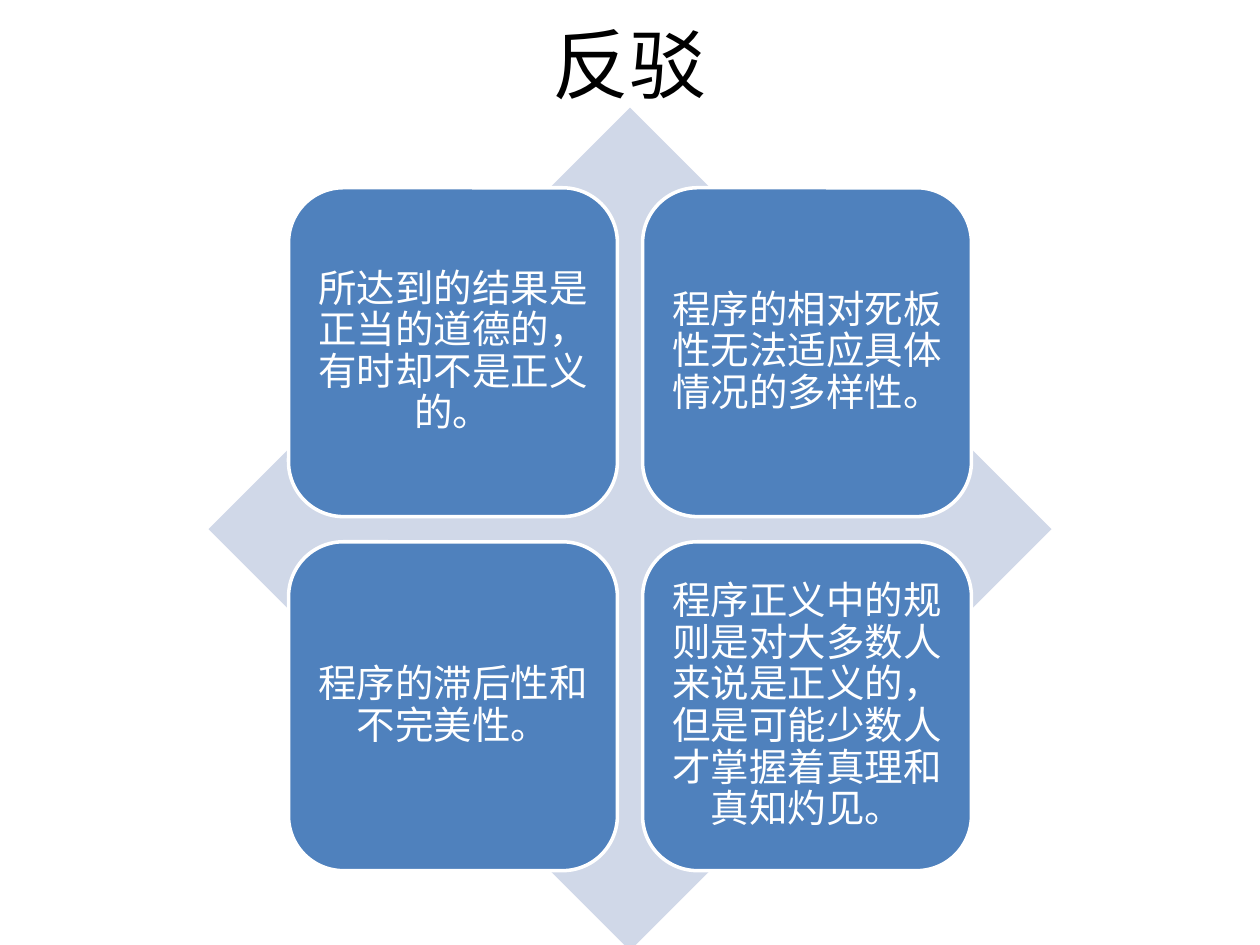
from pptx import Presentation
from pptx.dml.color import RGBColor
from pptx.enum.shapes import MSO_SHAPE
from pptx.enum.text import MSO_ANCHOR, PP_ALIGN
from pptx.util import Inches, Pt

DIAMOND, ROUNDED = MSO_SHAPE.DIAMOND, MSO_SHAPE.ROUNDED_RECTANGLE
MIDDLE, CENTER = MSO_ANCHOR.MIDDLE, PP_ALIGN.CENTER
TITLE_ONLY = 5

# Content
TITLE = "反驳"
OBJECTIONS = [
    "所达到的结果是正当的道德的，有时却不是正义的。",
    "程序的相对死板性无法适应具体情况的多样性。",
    "程序的滞后性和不完美性。",
    "程序正义中的规则是对大多数人来说是正义的，但是可能少数人才掌握着真理和真知灼见。",
]

# Style and geometry
COLORS = {"title": "000000", "diamond": "D0D8E8", "tile": "4F81BD", "white": "FFFFFF"}
FONT = "Calibri"
CENTER_X, CENTER_Y = 5, 4.2
DIAMOND_SIZE, TILE_SIZE, TILE_PITCH = 6.69, 2.61, 2.81
TILE_INSET = 0.09


def color(name):
    return RGBColor.from_string(COLORS[name])


def add_square(slide, kind, center_x, center_y, size, fill):
    square = slide.shapes.add_shape(
        kind, Inches(center_x - size / 2), Inches(center_y - size / 2),
        Inches(size), Inches(size))
    square.shadow.inherit = False
    square.fill.solid()
    square.fill.fore_color.rgb = color(fill)
    return square


def write(frame, text, size, font_color):
    frame.text = text
    frame.word_wrap = True
    frame.vertical_anchor = MIDDLE
    paragraph = frame.paragraphs[0]
    paragraph.alignment = CENTER
    paragraph.font.name = FONT
    paragraph.font.size = Pt(size)
    paragraph.font.color.rgb = color(font_color)
    return paragraph


def main():
    prs = Presentation()
    prs.slide_width, prs.slide_height = Inches(10), Inches(7.5)
    slide = prs.slides.add_slide(prs.slide_layouts[TITLE_ONLY])

    # Title
    title = slide.shapes.title
    title.left, title.top = Inches(0.5), Inches(0)
    title.width, title.height = Inches(9), Inches(0.99)
    write(title.text_frame, TITLE, 44, "title")

    # Diamond behind the tiles
    diamond = add_square(slide, DIAMOND, CENTER_X, CENTER_Y, DIAMOND_SIZE, "diamond")
    diamond.line.fill.background()

    # Two by two tiles around the diamond's center
    for index, objection in enumerate(OBJECTIONS):
        row, column = divmod(index, 2)
        tile = add_square(
            slide, ROUNDED,
            CENTER_X + (column - 0.5) * TILE_PITCH,
            CENTER_Y + (row - 0.5) * TILE_PITCH,
            TILE_SIZE, "tile")
        tile.line.color.rgb = color("white")
        tile.line.width = Pt(2)
        frame = tile.text_frame
        frame.margin_left = frame.margin_right = Inches(TILE_INSET)
        frame.margin_top = frame.margin_bottom = Inches(TILE_INSET)
        write(frame, objection, 22, "white").line_spacing = 0.9

    prs.save("out.pptx")


if __name__ == "__main__":
    main()
